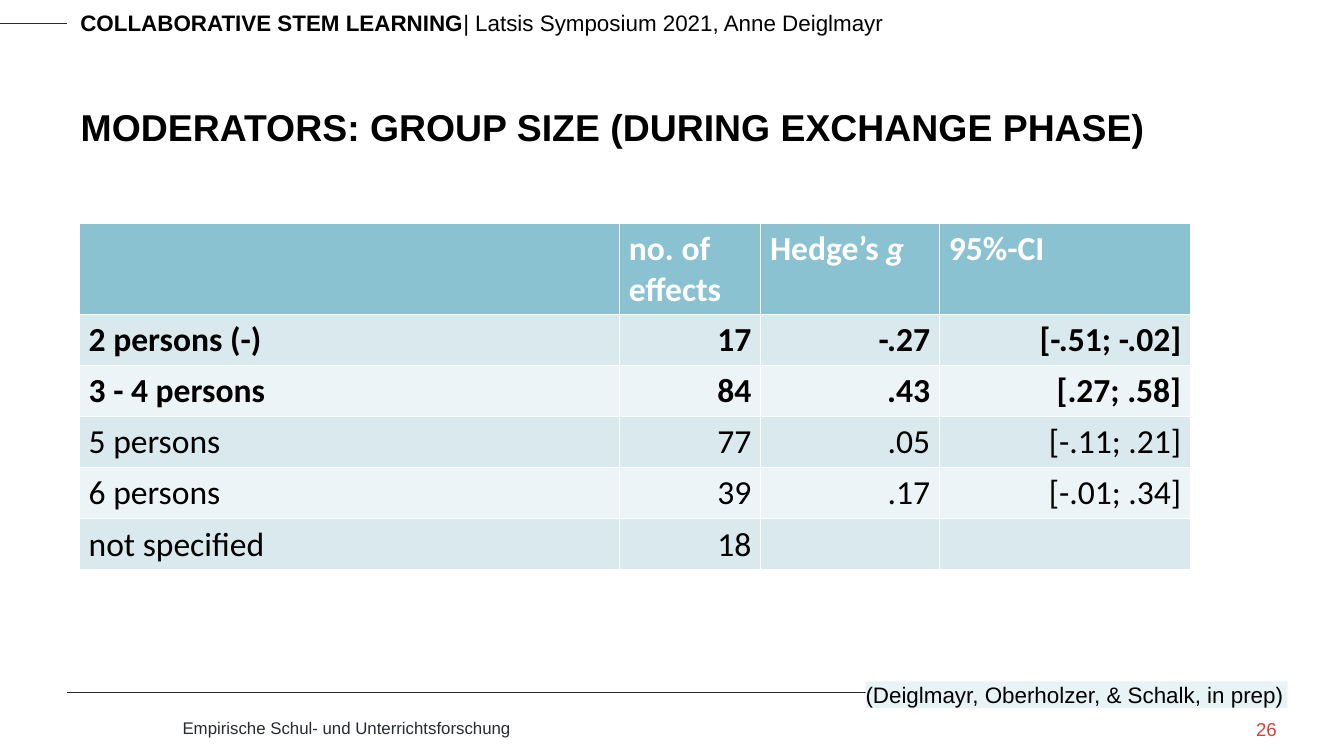
from lxml import etree
from pptx import Presentation
from pptx.dml.color import RGBColor
from pptx.enum.shapes import MSO_CONNECTOR, MSO_SHAPE
from pptx.enum.text import MSO_ANCHOR, PP_ALIGN
from pptx.oxml.ns import qn
from pptx.util import Inches, Pt

STRAIGHT = MSO_CONNECTOR.STRAIGHT
RECTANGLE = MSO_SHAPE.RECTANGLE
BOTTOM = MSO_ANCHOR.BOTTOM
LEFT, RIGHT = PP_ALIGN.LEFT, PP_ALIGN.RIGHT

BLACK = RGBColor(0x00, 0x00, 0x00)
WHITE = RGBColor(0xFF, 0xFF, 0xFF)
DARK = RGBColor(0x26, 0x2A, 0x31)
RED = RGBColor(0xD8, 0x41, 0x3E)
HEADER_TEAL = RGBColor(0x8A, 0xC2, 0xD1)
BAND_DARK = RGBColor(0xDA, 0xE9, 0xEE)
BAND_LIGHT = RGBColor(0xED, 0xF4, 0xF7)
CITATION_FILL = RGBColor(0xE8, 0xF3, 0xF6)


def write_runs(frame, runs, size, color, align=LEFT, font="Arial"):
    """Fill the first paragraph with (text, bold, italic) runs."""
    paragraph = frame.paragraphs[0]
    paragraph.alignment = align
    for text, bold, italic in runs:
        run = paragraph.add_run()
        run.text = text
        run.font.color.rgb = color
        style = {"name": font, "size": Pt(size), "bold": bold, "italic": italic}
        for key, value in style.items():
            setattr(run.font, key, value)


prs = Presentation()
prs.slide_width, prs.slide_height = Inches(10), Inches(10 * 9 / 16)
slide = prs.slides.add_slide(prs.slide_layouts[5])

# Header and footer rules
for start, end, y in ((0, 0.5, 0.17), (0.5, 9.5, 5.15)):
    rule = slide.shapes.add_connector(
        STRAIGHT, Inches(start), Inches(y), Inches(end), Inches(y))
    rule.line.color.rgb = DARK
    rule.line.width = Pt(0.25)
    etree.SubElement(rule._element.spPr, qn("a:effectLst"))

# Running header and footer
running_texts = (
    ((0.5, 0.02, 7.66, 0.3), 12, BLACK,
     [("COLLABORATIVE STEM LEARNING", True, False),
      ("| Latsis Symposium 2021, Anne Deiglmayr", False, False)]),
    ((1.26, 5.29, 7.42, 0.25), 9, DARK,
     [("Empirische Schul- und Unterrichtsforschung", False, False)]),
)
for position, size, color, runs in running_texts:
    running_text = slide.shapes.add_textbox(*map(Inches, position))
    running_text.text_frame.word_wrap = True
    write_runs(running_text.text_frame, runs, size, color)

page_number = slide.shapes.add_textbox(
    Inches(8.69), Inches(5.34), Inches(0.81), Inches(0.22))
page_number.text_frame.word_wrap = True
write_runs(page_number.text_frame, [("26", False, False)], 10, RED, RIGHT)

# Title
title = slide.shapes.title
title.left, title.top = Inches(0.5), Inches(0.33)
title.width, title.height = Inches(9.01), Inches(0.83)
title.text_frame.vertical_anchor = BOTTOM
title.text_frame.word_wrap = True
write_runs(title.text_frame,
           [("MODERATORS: GROUP SIZE (DURING EXCHANGE PHASE)", True, False)],
           20, BLACK)

# Effect sizes by group size; the default table style draws the white borders
COLUMN_WIDTHS = (4.02, 1.05, 1.33, 1.87)
HEADER_HEIGHT, ROW_HEIGHT = 0.68, 0.38
SIGNIFICANT_ROWS = (1, 2)
effects = (
    ("", "no. of effects", "Hedge’s ", "95%-CI"),
    ("2 persons (-)", "17", "-.27", "[-.51; -.02]"),
    ("3 - 4 persons", "84", ".43", "[.27; .58]"),
    ("5 persons", "77", ".05", "[-.11; .21]"),
    ("6 persons", "39", ".17", "[-.01; .34]"),
    ("not specified", "18", "", ""),
)
table_height = HEADER_HEIGHT + ROW_HEIGHT * (len(effects) - 1)
table = slide.shapes.add_table(
    len(effects), len(COLUMN_WIDTHS), Inches(0.59), Inches(1.66),
    Inches(sum(COLUMN_WIDTHS)), Inches(table_height)).table
for column, width in zip(table.columns, COLUMN_WIDTHS):
    column.width = Inches(width)

margins = {"margin_left": 0.07, "margin_right": 0.07,
           "margin_top": 0.04, "margin_bottom": 0.04}
for r, values in enumerate(effects):
    is_header = r == 0
    table.rows[r].height = Inches(HEADER_HEIGHT if is_header else ROW_HEIGHT)
    band = HEADER_TEAL if is_header else (BAND_LIGHT, BAND_DARK)[r % 2]
    bold = is_header or r in SIGNIFICANT_ROWS
    for c, value in enumerate(values):
        cell = table.cell(r, c)
        for key, margin in margins.items():
            setattr(cell, key, Inches(margin))
        cell.fill.solid()
        cell.fill.fore_color.rgb = band
        if not value:
            continue
        runs = [(value, bold, False)]
        if is_header and c == 2:
            runs.append(("g", True, True))
        write_runs(cell.text_frame, runs, 18, WHITE if is_header else BLACK,
                   LEFT if is_header or c == 0 else RIGHT, "Calibri")

# Citation
citation = slide.shapes.add_shape(
    RECTANGLE, Inches(6.44), Inches(5.07), Inches(3.14), Inches(0.2))
citation.shadow.inherit = False
citation.fill.solid()
citation.fill.fore_color.rgb = CITATION_FILL
citation.line.fill.background()
citation.text_frame.word_wrap = False
write_runs(citation.text_frame,
           [("(Deiglmayr, Oberholzer, & Schalk, in prep)", False, False)], 12, BLACK)

for frame in (page_number.text_frame, citation.text_frame):
    for key in margins:
        setattr(frame, key, 0)

prs.save("out.pptx")
